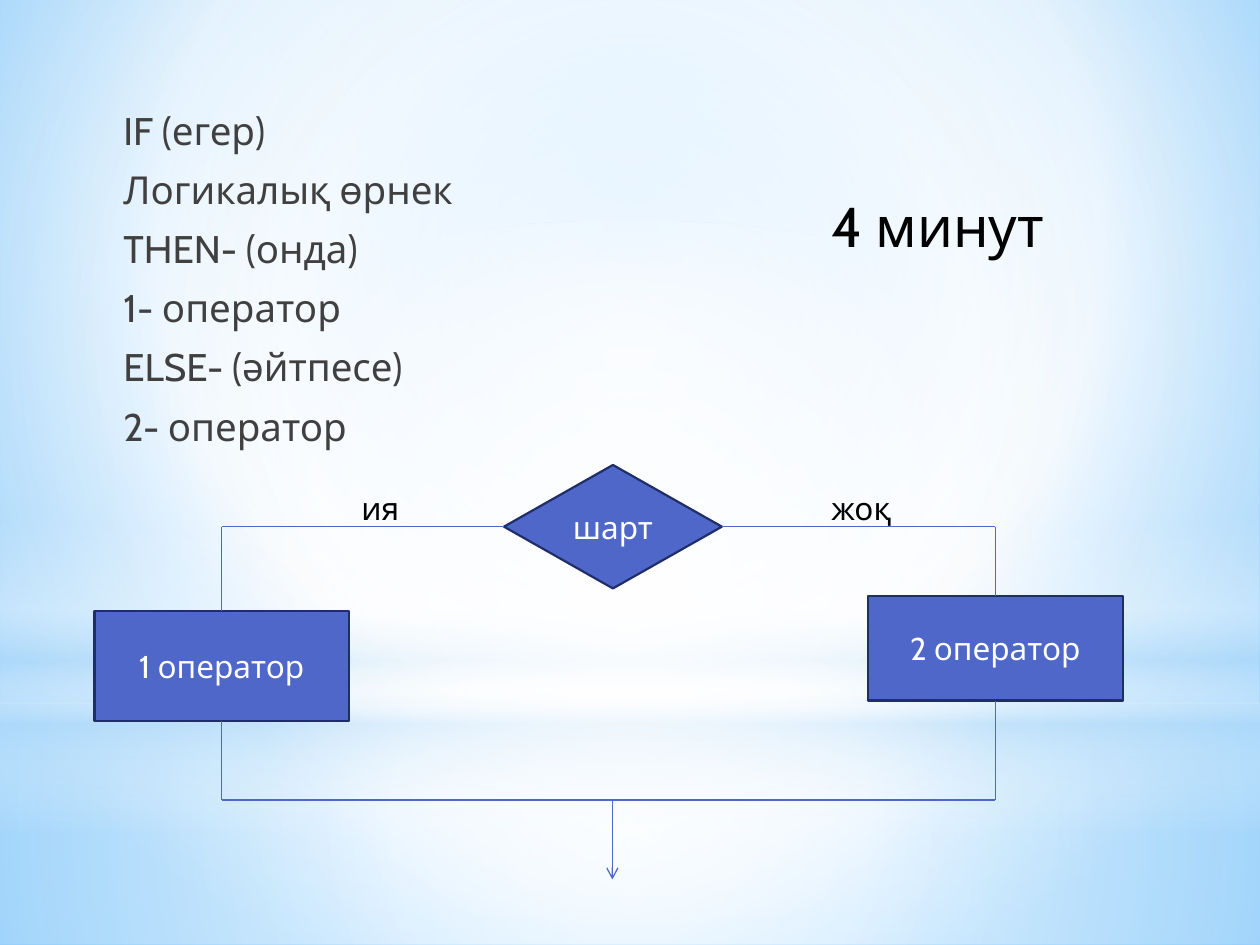
from dataclasses import dataclass

from lxml.etree import SubElement
from pptx import Presentation
from pptx.dml.color import RGBColor
from pptx.enum.shapes import MSO_CONNECTOR, MSO_SHAPE
from pptx.enum.text import MSO_ANCHOR, MSO_AUTO_SIZE, PP_ALIGN
from pptx.oxml.ns import qn
from pptx.util import Inches, Pt


@dataclass(frozen=True)
class Theme:
    font: str = "Cabin"
    body_size: float = 22
    label_size: float = 18
    timer_size: float = 32
    body_color: str = "404040"
    label_color: str = "000000"
    node_text: str = "FFFFFF"
    node_fill: str = "4E67C8"
    node_line: str = "1F2E69"
    backdrop: tuple = ((0, "9ED5FF", 100), (60, "FFFFFF", 100), (100, "5BB9FF", 100))
    floor: tuple = ((0, "FFFFFF", 91), (37, "FFFFFF", 76), (100, "B4DCFA", 79))
    sky: tuple = ((0, "FFFFFF", 89), (48, "FFFFFF", 62), (100, "B4DCFA", 79))
    horizon: tuple = ((0, "FFFFFF", 0), (29, "FFFFFF", 30), (45, "B4DCFA", 40),
                      (55, "FFFFFF", 26), (65, "B4DCFA", 60), (100, "FFFFFF", 0))
    glow: tuple = ((0, "FFFFFF", 100), (56, "FFFFFF", 0))


THEME = Theme()
CENTER = (50, 50, 50, 50)


def paint_gradient(fill, holder, stops, focus=None):
    fill.solid()
    solid = holder.find(qn("a:solidFill"))
    gradient = holder.makeelement(qn("a:gradFill"), {"rotWithShape": "1"})
    stop_list = SubElement(gradient, qn("a:gsLst"))
    for position, color, opacity in stops:
        stop = SubElement(stop_list, qn("a:gs"), pos=str(position * 1000))
        tone = SubElement(stop, qn("a:srgbClr"), val=color)
        if opacity < 100:
            SubElement(tone, qn("a:alpha"), val=str(opacity * 1000))
    if focus:
        circle = SubElement(gradient, qn("a:path"), {"path": "circle"})
        sides = {side: str(value * 1000) for side, value in zip("ltrb", focus)}
        SubElement(circle, qn("a:fillToRect"), sides)
    else:
        SubElement(gradient, qn("a:lin"), ang="5400000", scaled="0")
    holder.replace(solid, gradient)


def add_preset(slide, preset, box):
    shape = slide.shapes.add_shape(preset, *map(Inches, box))
    shape.shadow.inherit = False
    return shape


def add_haze(slide, preset, box, stops, focus=CENTER):
    haze = add_preset(slide, preset, box)
    haze.line.fill.background()
    paint_gradient(haze.fill, haze._element.spPr, stops, focus)


def write_text(frame, *lines, size, color, align=PP_ALIGN.LEFT, before=0, after=0):
    for index, line in enumerate(lines):
        paragraph = frame.add_paragraph() if index else frame.paragraphs[0]
        paragraph.alignment = align
        paragraph.space_before = Pt(before)
        paragraph.space_after = Pt(after)
        run = paragraph.add_run()
        run.text = line
        run.font.name = THEME.font
        run.font.size = Pt(size)
        run.font.color.rgb = RGBColor.from_string(color)


def add_node(slide, preset, box, caption):
    node = add_preset(slide, preset, box)
    node.fill.solid()
    node.fill.fore_color.rgb = RGBColor.from_string(THEME.node_fill)
    node.line.color.rgb = RGBColor.from_string(THEME.node_line)
    node.line.width = Pt(1.25)
    node.text_frame.word_wrap = True
    node.text_frame.vertical_anchor = MSO_ANCHOR.MIDDLE
    write_text(node.text_frame, caption, size=THEME.label_size,
               color=THEME.node_text, align=PP_ALIGN.CENTER)
    return node


def add_label(slide, box, caption, size):
    frame = slide.shapes.add_textbox(*map(Inches, box)).text_frame
    frame.word_wrap = True
    frame.auto_size = MSO_AUTO_SIZE.SHAPE_TO_FIT_TEXT
    write_text(frame, caption, size=size, color=THEME.label_color)


def add_flow(slide, start, end, source=None, target=None, arrow=False):
    flow = slide.shapes.add_connector(MSO_CONNECTOR.STRAIGHT, *map(Inches, start + end))
    flow.line.color.rgb = RGBColor.from_string(THEME.node_fill)
    flow.line.width = Pt(0.75)
    if source:
        flow.begin_connect(*source)
    if target:
        flow.end_connect(*target)
    if arrow:
        SubElement(flow.line._get_or_add_ln(), qn("a:tailEnd"), type="arrow")
    SubElement(flow._element.spPr, qn("a:effectLst"))


def add_background(slide):
    fill = slide.background.fill
    fill.solid()
    holder = slide._element.find(".//" + qn("p:bgPr"))
    paint_gradient(fill, holder, THEME.backdrop, (20, 10, 20, 60))
    add_haze(slide, MSO_SHAPE.RECTANGLE, (0, 5.58, 10, 1.92), THEME.floor)
    add_haze(slide, MSO_SHAPE.RECTANGLE, (0, 0, 10, 5.58), THEME.sky)
    add_haze(slide, MSO_SHAPE.RECTANGLE, (0, 4.12, 10, 2.5), THEME.horizon, None)
    add_haze(slide, MSO_SHAPE.OVAL, (0, 1.75, 10, 5.58), THEME.glow)


def add_syntax(slide):
    frame = slide.shapes.add_textbox(*map(Inches, (0.83, 0.8, 7.87, 3.8))).text_frame
    frame.word_wrap = True
    frame.margin_left = Inches(0.15)
    write_text(frame, "IF (егер)", "Логикалық өрнек", "THEN- (онда)", "1- оператор",
               "ELSE- (әйтпесе)", "2- оператор", size=THEME.body_size,
               color=THEME.body_color, before=4.4, after=3)


def add_flowchart(slide):
    condition = add_node(slide, MSO_SHAPE.FLOWCHART_DECISION, (4, 3.69, 1.73, 0.98), "шарт")
    first = add_node(slide, MSO_SHAPE.RECTANGLE, (0.75, 4.85, 2.02, 0.87), "1 оператор")
    second = add_node(slide, MSO_SHAPE.RECTANGLE, (6.89, 4.73, 2.02, 0.83), "2 оператор")

    branch_y, merge_y, exit_x = 4.18, 6.35, 4.86
    branches = ((first, 1.76, 4, 1, 4.85, 5.72), (second, 7.9, 5.73, 3, 4.73, 5.56))
    for operator, x, condition_x, side, top, bottom in branches:
        add_flow(slide, (condition_x, branch_y), (x, branch_y), source=(condition, side))
        add_flow(slide, (x, branch_y), (x, top), target=(operator, 0))
        add_flow(slide, (x, bottom), (x, merge_y), source=(operator, 2))
        add_flow(slide, (5.73, merge_y), (x, merge_y))
    add_flow(slide, (exit_x, merge_y), (exit_x, 6.98), arrow=True)


def main():
    deck = Presentation()
    deck.slide_width, deck.slide_height = Inches(10), Inches(7.5)
    slide = deck.slides.add_slide(deck.slide_layouts[6])
    add_background(slide)
    add_syntax(slide)
    add_flowchart(slide)
    add_label(slide, (2.77, 3.83, 0.81, 0.4), "ия", THEME.label_size)
    add_label(slide, (6.5, 3.83, 1.02, 0.4), "жоқ", THEME.label_size)
    add_label(slide, (6.5, 1.47, 1.89, 0.64), "4 минут", THEME.timer_size)
    deck.save("out.pptx")


if __name__ == "__main__":
    main()
